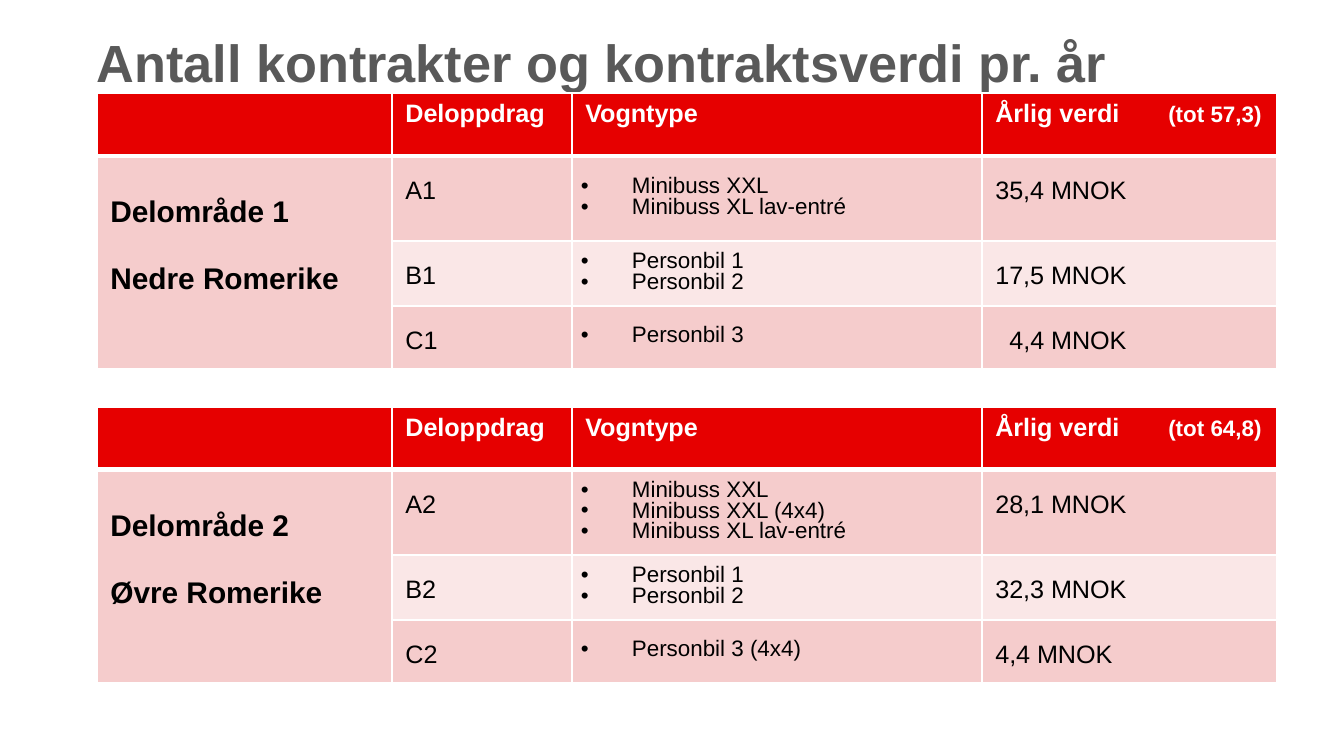
"""Build the slide of contract counts and yearly values for two sub-areas."""
from dataclasses import dataclass

from lxml import etree
from pptx import Presentation
from pptx import util as u
from pptx.dml.color import RGBColor
from pptx.enum import text as t
from pptx.oxml.ns import qn

EMU_PER_PX = 914400 / 134.4


@dataclass(frozen=True)
class Theme:
    font: str = "Arial"
    title: str = "595959"
    header: str = "E60000"
    bands: tuple = ("F5CCCC", "FAE7E7")
    white: str = "FFFFFF"
    black: str = "000000"
    title_size: float = 28
    area_size: float = 16
    body_size: float = 13.5
    small_size: float = 12


@dataclass(frozen=True)
class Contract:
    code: str
    vehicles: tuple
    value: str
    value_indent: int = 0


@dataclass(frozen=True)
class Area:
    top: int
    names: tuple
    total: str
    contracts: tuple


THEME = Theme()
LEFT = 97
COLUMNS = (295, 180, 410, 295)
ROWS = (63, 85, 65, 63)
BULLET_INDENT = 51
TOTAL_TAB = 173
AREAS = (
    Area(93, ("Delområde 1", "Nedre Romerike"), "(tot 57,3)", (
        Contract("A1", ("Minibuss XXL", "Minibuss XL lav-entré"), "35,4 MNOK"),
        Contract("B1", ("Personbil 1", "Personbil 2"), "17,5 MNOK"),
        Contract("C1", ("Personbil 3",), "4,4 MNOK", 14),
    )),
    Area(407, ("Delområde 2", "Øvre Romerike"), "(tot 64,8)", (
        Contract("A2", ("Minibuss XXL", "Minibuss XXL (4x4)", "Minibuss XL lav-entré"), "28,1 MNOK"),
        Contract("B2", ("Personbil 1", "Personbil 2"), "32,3 MNOK"),
        Contract("C2", ("Personbil 3 (4x4)",), "4,4 MNOK"),
    )),
)


def px(length: int) -> int:
    """Turn px into EMU."""
    return round(length * EMU_PER_PX)


def apply(target, **values) -> None:
    """Set each format value on the target."""
    for name, value in values.items():
        setattr(target, name, value)


def add_run(paragraph, words: str, size: float, color: str, bold: bool = False) -> None:
    """Add a formatted run."""
    run = paragraph.add_run()
    run.text = words
    apply(run.font, name=THEME.font, size=u.Pt(size), bold=bold)
    run.font.color.rgb = RGBColor.from_string(color)


def write(cell, lines: tuple, size: float, color: str, bold: bool = False, spacing=None) -> list:
    """Write one paragraph for each line and return the paragraphs."""
    frame = cell.text_frame
    for index, line in enumerate(lines):
        paragraph = frame.add_paragraph() if index else frame.paragraphs[0]
        paragraph.line_spacing = spacing
        add_run(paragraph, line, size, color, bold)
    return list(frame.paragraphs)


def paint(cell, color: str, top: float = 1, bottom: float = 1) -> None:
    """Fill a cell and give it white borders."""
    cell.fill.solid()
    cell.fill.fore_color.rgb = RGBColor.from_string(color)
    properties = cell._tc.get_or_add_tcPr()
    widths = {"a:lnL": 1, "a:lnR": 1, "a:lnT": top, "a:lnB": bottom}
    for index, (side, width) in enumerate(widths.items()):
        line = etree.Element(qn(side), w=str(u.Pt(width)))
        fill = etree.SubElement(line, qn("a:solidFill"))
        etree.SubElement(fill, qn("a:srgbClr"), val=THEME.white)
        properties.insert(index, line)


def list_vehicles(cell, vehicles: tuple) -> None:
    """Write the vehicle types as a bulleted list."""
    apply(cell, vertical_anchor=t.MSO_ANCHOR.MIDDLE, margin_left=px(9), margin_right=px(9),
          margin_top=px(5), margin_bottom=px(5))
    for paragraph in write(cell, vehicles, THEME.small_size, THEME.black, spacing=u.Pt(11)):
        paragraph.alignment = t.PP_ALIGN.JUSTIFY
        properties = paragraph._p.get_or_add_pPr()
        properties.set("marL", str(px(BULLET_INDENT)))
        properties.set("indent", str(-px(BULLET_INDENT)))
        etree.SubElement(properties, qn("a:buFont"), typeface=THEME.font)
        etree.SubElement(properties, qn("a:buChar"), char="•")


def write_header(table, total: str) -> None:
    """Write the column headings and the yearly total."""
    headings = ("Deloppdrag", "Vogntype", "Årlig verdi")
    for column, heading in enumerate(headings, 1):
        paragraph, = write(table.cell(0, column), (heading,), THEME.body_size, THEME.white, True)
    tabs = etree.SubElement(paragraph._p.get_or_add_pPr(), qn("a:tabLst"))
    etree.SubElement(tabs, qn("a:tab"), pos=str(px(TOTAL_TAB)), algn="l")
    add_run(paragraph, "\t" + total, THEME.small_size, THEME.white, True)


def add_area(slide, area: Area) -> None:
    """Add the contract table of one area."""
    table = slide.shapes.add_table(len(ROWS), len(COLUMNS), px(LEFT), px(area.top),
                                   px(sum(COLUMNS)), px(sum(ROWS))).table
    for column, width in zip(table.columns, COLUMNS):
        column.width = px(width)
    for index, (row, height) in enumerate(zip(table.rows, ROWS)):
        row.height = px(height)
        for column, cell in enumerate(row.cells):
            if index == 0:
                paint(cell, THEME.header, bottom=3)
            else:
                band = 0 if column == 0 else (index - 1) % 2
                paint(cell, THEME.bands[band], top=3 if index == 1 else 1)
    write_header(table, area.total)
    table.cell(1, 0).merge(table.cell(len(ROWS) - 1, 0))
    write(table.cell(1, 0), area.names, THEME.area_size, THEME.black, True, 2.0)
    for row, contract in enumerate(area.contracts, 1):
        write(table.cell(row, 1), (contract.code,), THEME.body_size, THEME.black, spacing=1.5)
        list_vehicles(table.cell(row, 2), contract.vehicles)
        value, = write(table.cell(row, 3), (contract.value,), THEME.body_size, THEME.black, spacing=1.5)
        if contract.value_indent:
            value._p.get_or_add_pPr().set("marL", str(px(contract.value_indent)))


def add_title(slide, words: str) -> None:
    """Place and format the slide title."""
    title = slide.shapes.title
    apply(title, left=px(LEFT), top=px(30), width=px(1173), height=px(63))
    frame = title.text_frame
    apply(frame, margin_left=0, margin_right=0, margin_top=0, margin_bottom=0, word_wrap=True,
          vertical_anchor=t.MSO_ANCHOR.MIDDLE, auto_size=t.MSO_AUTO_SIZE.SHAPE_TO_FIT_TEXT)
    frame.paragraphs[0].alignment = t.PP_ALIGN.LEFT
    add_run(frame.paragraphs[0], words, THEME.title_size, THEME.title, True)


def main() -> None:
    """Build and save the presentation."""
    deck = Presentation()
    apply(deck, slide_width=px(1344), slide_height=px(756))
    slide = deck.slides.add_slide(deck.slide_layouts[5])
    add_title(slide, "Antall kontrakter og kontraktsverdi pr. år")
    for area in AREAS:
        add_area(slide, area)
    deck.save("out.pptx")


if __name__ == "__main__":
    main()
